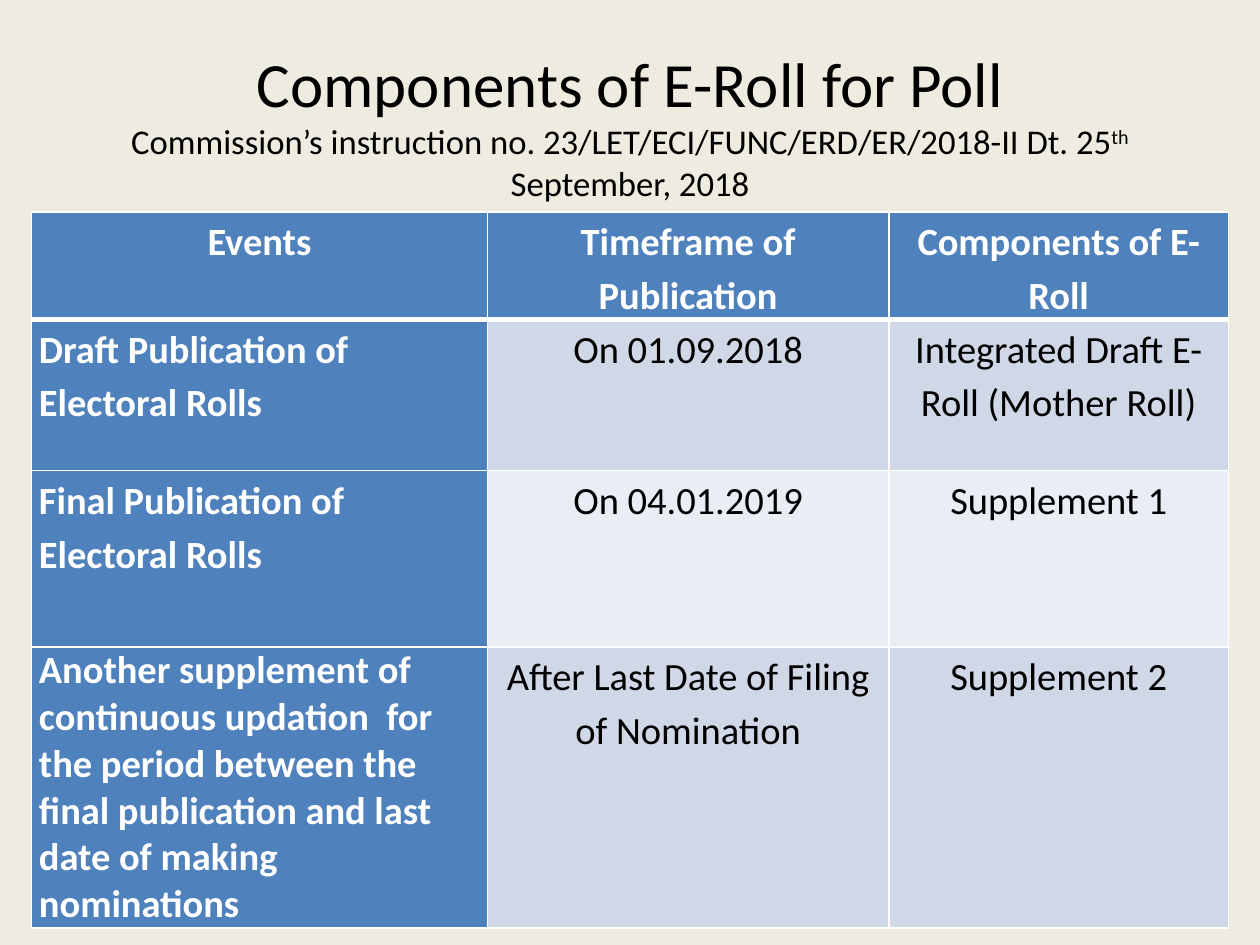
"""Build the electoral roll components slide."""
import lxml.etree
import pptx
import pptx.dml.color
import pptx.enum.text
import pptx.oxml.ns
import pptx.util

Pt = pptx.util.Pt
ALIGN = pptx.enum.text.PP_ALIGN
WHITE, BLACK, BLUE = "FFFFFF", "000000", "4F81BD"
BANDS = ("D0D8E8", "E9EDF4")
COLUMN_WIDTHS = (260.5, 229.5, 194)
ROW_HEIGHTS = (61.5, 86.4, 100.8, 160.5)
ROWS = (
    ("Events", "Timeframe of Publication", "Components of E-Roll"),
    ("Draft Publication of Electoral Rolls", "On 01.09.2018",
     "Integrated Draft E-Roll (Mother Roll)"),
    ("Final Publication of Electoral Rolls", "On 04.01.2019", "Supplement 1"),
    ("Another supplement of continuous updation  for the period between the "
     "final publication and last date of making nominations",
     "After Last Date of Filing of Nomination", "Supplement 2"),
)


def rgb(value):
    """Return the colour for a hex string."""
    return pptx.dml.color.RGBColor.from_string(value)


def apply_format(target, values):
    """Set each named attribute on the target."""
    for name, value in values.items():
        setattr(target, name, value)


def fill_solid(owner, colour):
    """Give the owner a solid fill."""
    owner.fill.solid()
    owner.fill.fore_color.rgb = rgb(colour)


def add_run(paragraph, text, size, colour=BLACK, bold=False):
    """Append formatted text to the paragraph and return its run."""
    run = paragraph.add_run()
    run.text = text
    apply_format(run.font, {"name": "Calibri", "size": Pt(size), "bold": bold})
    run.font.color.rgb = rgb(colour)
    return run


def add_title(slide):
    """Fill the title placeholder with the heading and its instruction number."""
    title = slide.shapes.title
    apply_format(title, {"left": Pt(36), "top": Pt(21.6),
                         "width": Pt(648), "height": Pt(98.6)})
    apply_format(title.text_frame, {
        "word_wrap": True,
        "auto_size": pptx.enum.text.MSO_AUTO_SIZE.NONE,
        "vertical_anchor": pptx.enum.text.MSO_ANCHOR.MIDDLE})
    paragraph = title.text_frame.paragraphs[0]
    paragraph.alignment = ALIGN.CENTER
    add_run(paragraph, "Components of E-Roll for Poll", 36)
    paragraph.add_line_break()
    add_run(paragraph, "Commission’s instruction no. "
            "23/LET/ECI/FUNC/ERD/ER/2018-II Dt. 25", 19.8)
    ordinal = add_run(paragraph, "th", 19.8)
    ordinal.font._element.set("baseline", "30000")
    add_run(paragraph, " September, 2018", 19.8)


def set_borders(cell, widths):
    """Draw white borders of the given widths, keyed by side."""
    qualified = pptx.oxml.ns.qn
    properties = cell._tc.get_or_add_tcPr()
    for side, width in widths.items():
        line = lxml.etree.SubElement(
            properties, qualified(f"a:ln{side}"), w=str(Pt(width)))
        fill = lxml.etree.SubElement(line, qualified("a:solidFill"))
        lxml.etree.SubElement(fill, qualified("a:srgbClr"), val=WHITE)


def format_cell(cell, text, row, column):
    """Write and style one cell according to its place in the table."""
    heading = row == 0 or column == 0
    apply_format(cell, {"margin_left": Pt(4.3), "margin_right": Pt(4.3),
                        "margin_top": 0, "margin_bottom": 0})
    set_borders(cell, {"L": 1, "R": 1, "T": 3 if row == 1 else 1,
                       "B": 3 if row == 0 else 1})
    fill_solid(cell, BLUE if heading else BANDS[(row - 1) % 2])
    paragraph = cell.text_frame.paragraphs[0]
    long_event = column == 0 and row == len(ROWS) - 1
    apply_format(paragraph, {
        "alignment": ALIGN.LEFT if column == 0 and row else ALIGN.CENTER,
        "line_spacing": 1.0 if long_event else 1.15})
    add_run(paragraph, text, 22, WHITE if heading else BLACK, heading)


def add_events_table(slide):
    """Add the table of publication events."""
    frame = slide.shapes.add_table(
        len(ROWS), len(COLUMN_WIDTHS), Pt(18), Pt(121),
        Pt(sum(COLUMN_WIDTHS)), Pt(sum(ROW_HEIGHTS)))
    table = frame.table
    for column, width in zip(table.columns, COLUMN_WIDTHS):
        column.width = Pt(width)
    for row, height in zip(table.rows, ROW_HEIGHTS):
        row.height = Pt(height)
    for row, texts in enumerate(ROWS):
        for column, text in enumerate(texts):
            format_cell(table.cell(row, column), text, row, column)


def main():
    """Create and save the presentation."""
    presentation = pptx.Presentation()
    apply_format(presentation, {"slide_width": Pt(720), "slide_height": Pt(540)})
    slide = presentation.slides.add_slide(presentation.slide_layouts[5])
    fill_solid(slide.background, "EEECE1")
    add_title(slide)
    add_events_table(slide)
    presentation.save("out.pptx")


if __name__ == "__main__":
    main()
